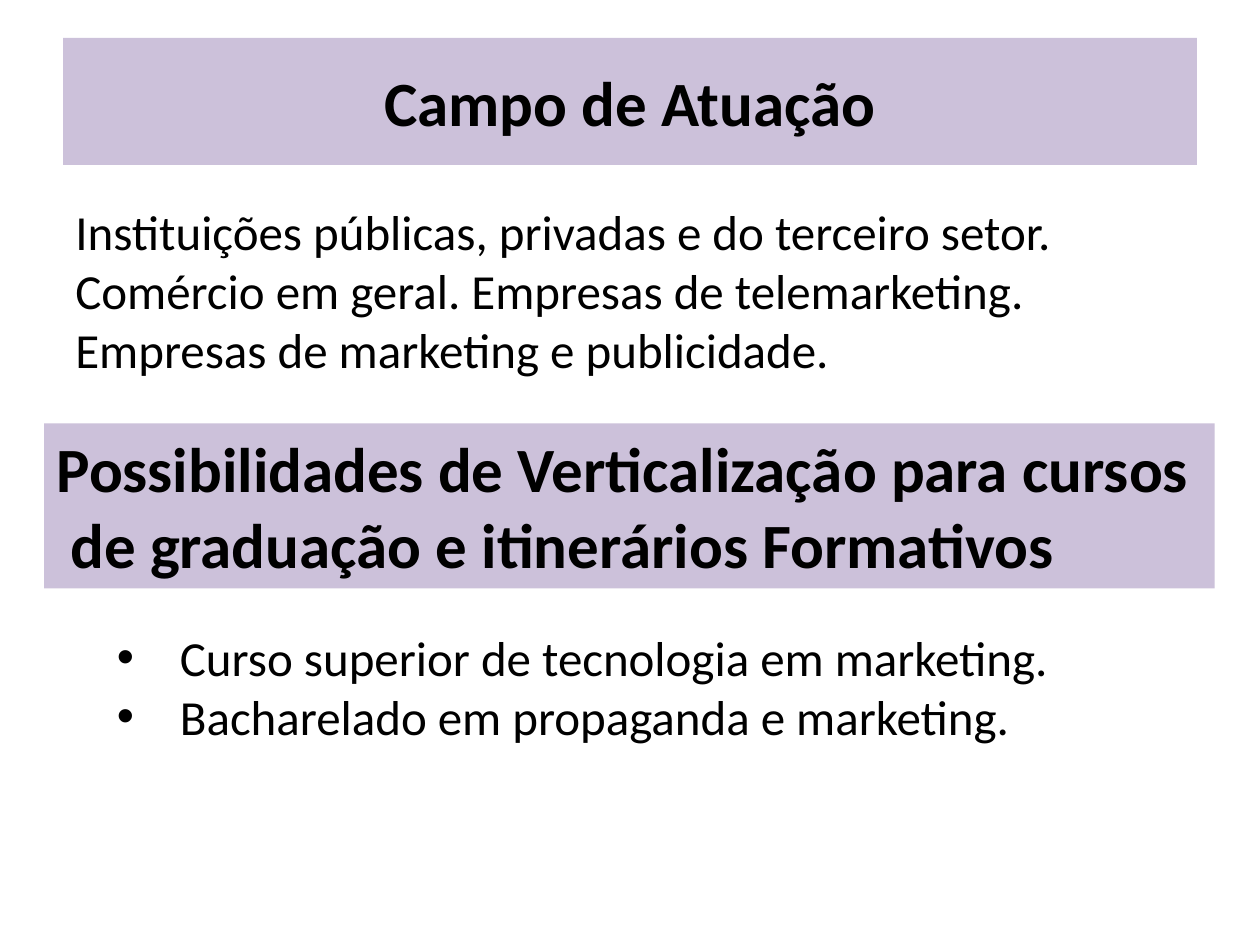
from dataclasses import dataclass
from typing import Optional

from lxml.etree import SubElement
from pptx import Presentation
from pptx.dml.color import RGBColor
from pptx.enum.text import MSO_ANCHOR as Anchor, PP_ALIGN as Align
from pptx.oxml.ns import qn
from pptx.util import Inches, Pt

LILAC = RGBColor(0xCC, 0xC1, 0xDA)
BLACK = RGBColor(0, 0, 0)
WIDTH, HEIGHT = Inches(10), Inches(7.5)
COLS, ROWS = 100, 75
TITLE_ONLY = 5


@dataclass(frozen=True)
class Block:
    col: float
    row: float
    cols: float
    rows: float
    lines: tuple[str, ...]
    size: int = 28
    bold: bool = False
    fill: Optional[RGBColor] = None
    align: Align = Align.LEFT
    anchor: Anchor = Anchor.TOP
    bullet: str = ""
    last_indent: float = 0


TITLE = Block(5, 3, 90, 10.1, ("Campo de Atuação",), 36, True, LILAC,
              Align.CENTER, Anchor.MIDDLE)
BLOCKS = (
    Block(5, 15.5, 90, 15,
          ("Instituições públicas, privadas e do terceiro setor. "
           "Comércio em geral. Empresas de telemarketing. "
           "Empresas de marketing e publicidade.",)),
    Block(3.5, 33.6, 92.9, 13.1,
          ("Possibilidades de Verticalização para cursos",
           "de graduação e itinerários Formativos"), 36, True, LILAC,
          last_indent=0.11),
    Block(8.3, 49.3, 85.8, 10.4,
          ("Curso superior de tecnologia em marketing.",
           "Bacharelado em propaganda e marketing."), bullet="•"),
)


def set_attrs(obj, values: dict) -> None:
    for name, value in values.items():
        setattr(obj, name, value)


def indent(p, left: float, first: float = 0, bullet: str = "") -> None:
    pPr = p._p.get_or_add_pPr()
    pPr.set("marL", str(Inches(left)))
    pPr.set("indent", str(Inches(first)))
    if bullet:
        SubElement(pPr, qn("a:buFont")).set("typeface", "Arial")
        SubElement(pPr, qn("a:buChar")).set("char", bullet)


def format_block(sp, block: Block) -> None:
    set_attrs(sp, {
        "left": int(WIDTH * block.col / COLS),
        "top": int(HEIGHT * block.row / ROWS),
        "width": int(WIDTH * block.cols / COLS),
        "height": int(HEIGHT * block.rows / ROWS),
    })
    if block.fill is not None:
        sp.fill.solid()
        sp.fill.fore_color.rgb = block.fill
    tf = sp.text_frame
    set_attrs(tf, {"word_wrap": True, "vertical_anchor": block.anchor,
                   "text": "\n".join(block.lines)})
    for p in tf.paragraphs:
        p.alignment = block.align
        if block.bullet:
            indent(p, 0.5, -0.5, block.bullet)
        for r in p.runs:
            set_attrs(r.font, {"name": "Calibri", "size": Pt(block.size),
                               "bold": block.bold})
            r.font.color.rgb = BLACK
    if block.last_indent:
        indent(tf.paragraphs[-1], block.last_indent)


def main() -> None:
    prs = Presentation()
    set_attrs(prs, {"slide_width": WIDTH, "slide_height": HEIGHT})
    s = prs.slides.add_slide(prs.slide_layouts[TITLE_ONLY])
    format_block(s.shapes.title, TITLE)
    for block in BLOCKS:
        format_block(s.shapes.add_textbox(0, 0, 0, 0), block)
    prs.save("out.pptx")


if __name__ == "__main__":
    main()
